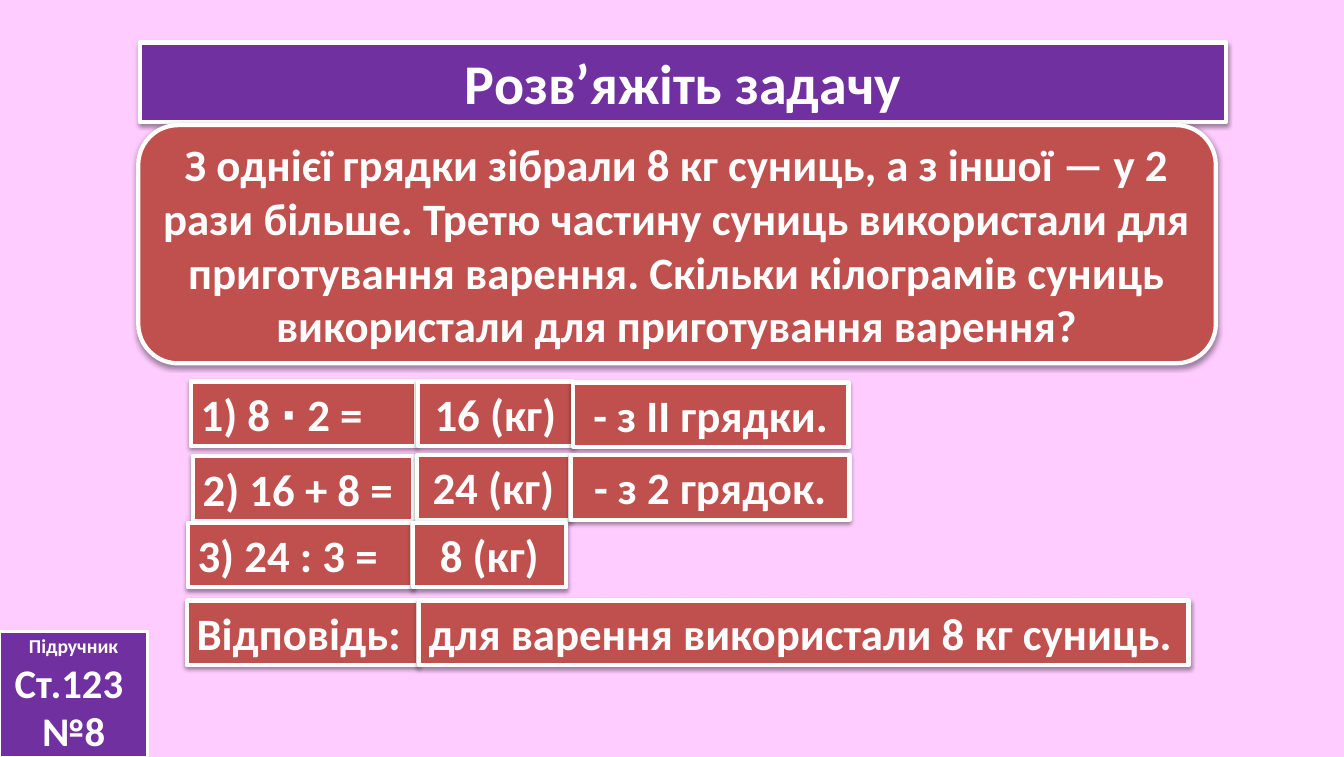
from lxml import etree
from pptx import Presentation
from pptx import util as u
from pptx.dml.color import RGBColor
from pptx.enum import shapes, text
from pptx.oxml.ns import qn

COLORS = {"background": "FFCCFF", "purple": "7030A0", "red": "C0504D", "white": "FFFFFF", "shadow": "000000"}
RECT = shapes.MSO_SHAPE.RECTANGLE
ROUNDED = shapes.MSO_SHAPE.ROUNDED_RECTANGLE
LEFT, CENTER = text.PP_ALIGN.LEFT, text.PP_ALIGN.CENTER
ROW_HEIGHT = 0.64


def add_shadow(panel):
    effects = panel._element.spPr.find(qn("a:effectLst"))
    outer = etree.SubElement(effects, qn("a:outerShdw"), blurRad="40000", dist="20000", dir="5400000", rotWithShape="0")
    tint = etree.SubElement(outer, qn("a:srgbClr"), val=COLORS["shadow"])
    etree.SubElement(tint, qn("a:alpha"), val="38000")


def add_panel(kind, box, fill, lines, align=CENTER, border=3, anchor=text.MSO_ANCHOR.MIDDLE):
    panel = slide.shapes.add_shape(kind, *[u.Inches(side) for side in box])
    panel.shadow.inherit = False
    panel.fill.solid()
    panel.fill.fore_color.rgb = RGBColor.from_string(COLORS[fill])
    panel.line.color.rgb = RGBColor.from_string(COLORS["white"])
    panel.line.width = u.Pt(border)
    frame = panel.text_frame
    frame.word_wrap = True
    frame.vertical_anchor = anchor
    for index, (wording, size) in enumerate(lines):
        paragraph = frame.add_paragraph() if index else frame.paragraphs[0]
        paragraph.alignment = align
        run = paragraph.add_run()
        run.text = wording
        for name, value in {"name": "Calibri", "size": u.Pt(size), "bold": True}.items():
            setattr(run.font, name, value)
        run.font.color.rgb = RGBColor.from_string(COLORS["white"])
    return panel


deck = Presentation()
deck.slide_width, deck.slide_height = u.Inches(13.32), u.Inches(7.5)
slide = deck.slides.add_slide(deck.slide_layouts[6])
slide.background.fill.solid()
slide.background.fill.fore_color.rgb = RGBColor.from_string(COLORS["background"])

title = add_panel(RECT, (1.39, 0.42, 10.76, 0.79), "purple", [("Розв’яжіть задачу", 40)])
add_shadow(title)

problem = add_panel(ROUNDED, (1.37, 1.24, 10.68, 2.36), "red", [(
    "З однієї грядки зібрали 8 кг суниць, а з іншої — у 2 рази більше. "
    "Третю частину суниць використали для приготування варення. "
    "Скільки кілограмів суниць використали для приготування варення?", 32)])
add_shadow(problem)

add_panel(RECT, (0, 6.26, 1.46, 1.24), "purple",
          [("Підручник", 14), ("Ст.123 ", 29), ("№8", 29)], border=2)

solution = [
    (1.89, 3.78, 2.23, LEFT, "1) 8 ∙ 2 ="),
    (1.85, 5.95, 2.29, LEFT, "Відповідь:"),
    (4.14, 3.78, 1.54, CENTER, "16 (кг)"),
    (4.15, 5.95, 7.63, LEFT, "для варення використали 8 кг суниць."),
    (1.91, 4.52, 2.18, LEFT, "2) 16 + 8 ="),
    (4.13, 4.51, 1.52, CENTER, "24 (кг)"),
    (5.68, 3.79, 2.73, CENTER, "- з ІІ грядки."),
    (1.86, 5.18, 2.23, LEFT, "3) 24 : 3 ="),
    (5.66, 4.51, 2.76, CENTER, "- з 2 грядок."),
    (4.09, 5.18, 1.52, CENTER, "8 (кг)"),
]
for left, top, width, align, wording in solution:
    step = add_panel(RECT, (left, top, width, ROW_HEIGHT), "red", [(wording, 32)],
                     align=align, anchor=text.MSO_ANCHOR.TOP)
    step.text_frame.auto_size = text.MSO_AUTO_SIZE.SHAPE_TO_FIT_TEXT
    add_shadow(step)

deck.save("out.pptx")
